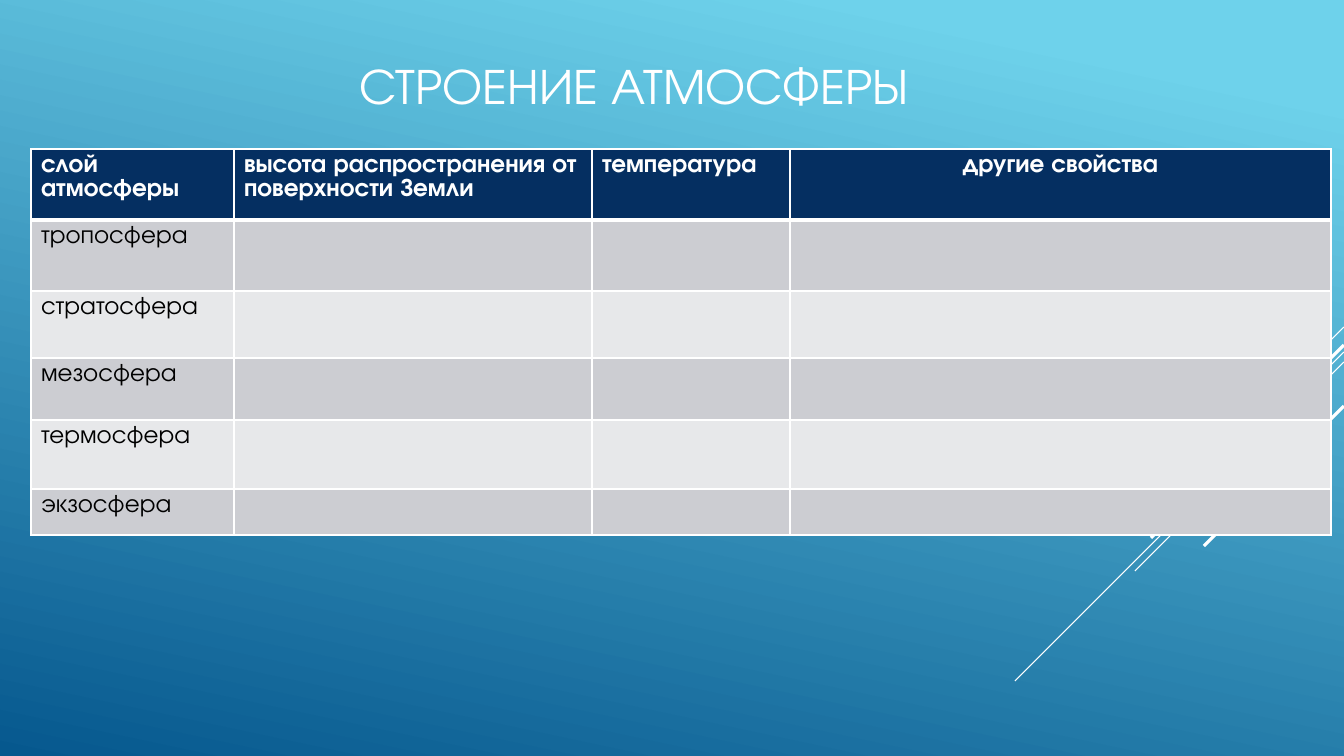
from lxml.etree import SubElement
from pptx import Presentation
from pptx.dml.color import RGBColor
from pptx.enum.shapes import MSO_CONNECTOR
from pptx.enum.text import MSO_ANCHOR, MSO_AUTO_SIZE, PP_ALIGN
from pptx.oxml import parse_xml
from pptx.oxml.ns import nsdecls, qn
from pptx.util import Pt

WHITE = RGBColor(0xFF, 0xFF, 0xFF)
BLACK = RGBColor(0x00, 0x00, 0x00)
NAVY = RGBColor(0x05, 0x2F, 0x61)
SKY = RGBColor(0x6E, 0xD2, 0xEB)
OCEAN = RGBColor(0x06, 0x58, 0x8E)
BANDS = RGBColor(0xCC, 0xCD, 0xD2), RGBColor(0xE7, 0xE8, 0xEA)

FONT = "TeX Gyre Adventor"
WIDTH, HEIGHT = 1344, 756
EMU_PER_PX = 914400 / 100.8

TITLE_TEXT = {"name": FONT, "size": Pt(36), "bold": False}
HEADER_TEXT = {"name": FONT, "size": Pt(18), "bold": True}
LAYER_TEXT = {**HEADER_TEXT, "bold": False}

HEADERS = [
    "слой атмосферы",
    "высота распространения от поверхности Земли",
    "температура",
    "другие свойства",
]
LAYERS = ["тропосфера", "стратосфера", "мезосфера", "термосфера", "экзосфера"]
COLUMN_WIDTHS = [203, 358, 198, 541]
ROW_HEIGHTS = [71, 71, 67, 62, 69, 46]

# Diagonal rays: height at the right edge, horizontal run, weight in points
RAYS = [
    (327, 101, 0.75),
    (352, 329, 0.75),
    (362, 209, 0.75),
    (345, 193, 2.25),
    (406, 140, 2.25),
]


def px(length):
    return round(length * EMU_PER_PX)


class AtmosphereSlide:
    def __init__(self, deck):
        self.slide = deck.slides.add_slide(deck.slide_layouts[5])

    def background(self, angle, stops):
        fill = self.slide.background.fill
        fill.gradient()
        fill.gradient_angle = angle
        for stop, (position, color) in zip(fill.gradient_stops, stops):
            stop.position = position
            stop.color.rgb = color

    def ray(self, y, run, weight):
        line = self.slide.shapes.add_connector(
            MSO_CONNECTOR.STRAIGHT, px(WIDTH), px(y), px(WIDTH - run), px(y + run))
        line.line.color.rgb = WHITE
        line.line.width = Pt(weight)
        SubElement(line.element.spPr, qn("a:effectLst"))

    def label(self, frame, text, style, color, align=PP_ALIGN.LEFT):
        paragraph = frame.paragraphs[0]
        paragraph.alignment = align
        run = paragraph.add_run()
        run.text = text
        for key, value in style.items():
            setattr(run.font, key, value)
        run.font.color.rgb = color

    def title(self, text, left, top, width, height):
        heading = self.slide.shapes.title
        place = {"left": left, "top": top, "width": width, "height": height}
        for key, value in place.items():
            setattr(heading, key, px(value))
        frame = heading.text_frame
        layout = {"word_wrap": True, "auto_size": MSO_AUTO_SIZE.NONE,
                  "vertical_anchor": MSO_ANCHOR.BOTTOM}
        for key, value in layout.items():
            setattr(frame, key, value)
        self.label(frame, text, TITLE_TEXT, WHITE, PP_ALIGN.CENTER)

    def borders(self, cell, top, bottom):
        weights = {"lnL": 1, "lnR": 1, "lnT": top, "lnB": bottom}
        properties = cell._tc.get_or_add_tcPr()
        for index, (side, weight) in enumerate(weights.items()):
            properties.insert(index, parse_xml(
                f'<a:{side} {nsdecls("a")} w="{Pt(weight)}"><a:solidFill>'
                f'<a:srgbClr val="{WHITE}"/></a:solidFill></a:{side}>'))

    def layer_table(self, left, top):
        table = self.slide.shapes.add_table(
            len(ROW_HEIGHTS), len(COLUMN_WIDTHS), px(left), px(top),
            px(sum(COLUMN_WIDTHS)), px(sum(ROW_HEIGHTS))).table
        for flag in ("first_row", "horz_banding"):
            setattr(table, flag, False)
        for column, width in zip(table.columns, COLUMN_WIDTHS):
            column.width = px(width)

        for r, height in enumerate(ROW_HEIGHTS):
            table.rows[r].height = px(height)
            for cell in table.rows[r].cells:
                cell.fill.solid()
                cell.fill.fore_color.rgb = BANDS[(r - 1) % 2] if r else NAVY
                # Heavy rule between the header and the layers
                self.borders(cell, 3 if r == 1 else 1, 3 if r == 0 else 1)

        for c, header in enumerate(HEADERS):
            align = PP_ALIGN.CENTER if header == HEADERS[-1] else PP_ALIGN.LEFT
            self.label(table.cell(0, c).text_frame, header, HEADER_TEXT, WHITE, align)
        for r, layer in enumerate(LAYERS, start=1):
            self.label(table.cell(r, 0).text_frame, layer, LAYER_TEXT, BLACK)


def main():
    deck = Presentation()
    deck.slide_width, deck.slide_height = px(WIDTH), px(HEIGHT)
    page = AtmosphereSlide(deck)

    # Backdrop
    page.background(258, [(0.1, SKY), (1.0, OCEAN)])
    for ray in RAYS:
        page.ray(*ray)

    # Content
    page.title("СТРОЕНИЕ АТМОСФЕРЫ", 164, 0, 940, 120)
    page.layer_table(31, 149)

    deck.save("out.pptx")


if __name__ == "__main__":
    main()
